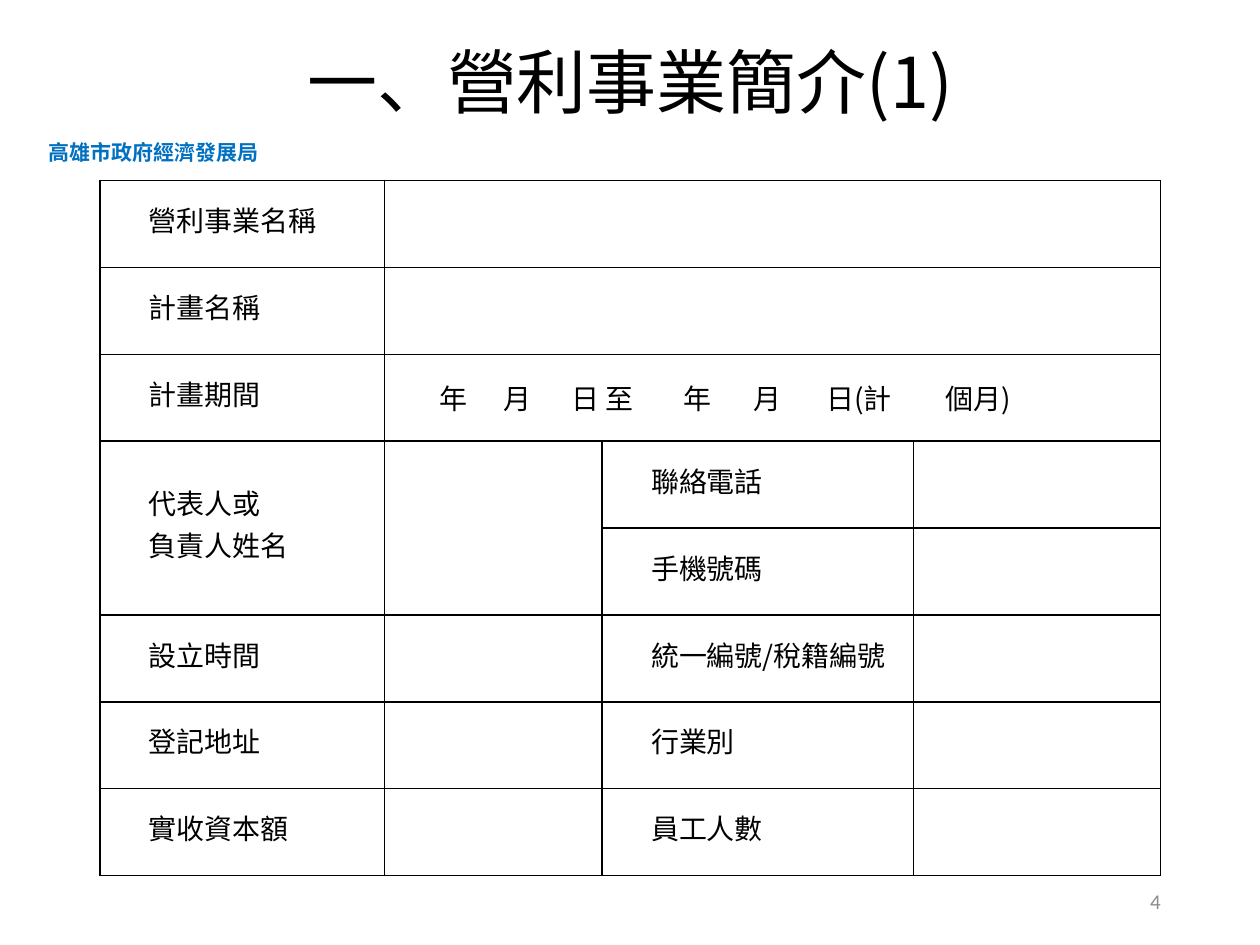
from pptx import Presentation
from pptx.dml.color import RGBColor
from pptx.enum.text import MSO_ANCHOR, MSO_AUTO_SIZE, PP_ALIGN
from pptx.oxml.ns import qn
from pptx.util import Pt
from lxml import etree

MIDDLE = MSO_ANCHOR.MIDDLE
LEFT, CENTER, RIGHT = PP_ALIGN.LEFT, PP_ALIGN.CENTER, PP_ALIGN.RIGHT
FIXED = MSO_AUTO_SIZE.NONE

BLACK = RGBColor(0x00, 0x00, 0x00)
BLUE = RGBColor(0x00, 0x70, 0xC0)
GRAY = RGBColor(0x8C, 0x8C, 0x8C)
CJK = "Noto Sans CJK SC"

COLS = [162.8, 124.3, 178, 141.1]
ROW = 49.65
# Left label and right label of each row
LABELS = [
    ("營利事業名稱", ""),
    ("計畫名稱", ""),
    ("計畫期間", ""),
    ("代表人或\n負責人姓名", "聯絡電話"),
    ("", "手機號碼"),
    ("設立時間", "統一編號/稅籍編號"),
    ("登記地址", "行業別"),
    ("實收資本額", "員工人數"),
]
PERIOD = "\t年\t月\t日 至\t年\t月\t日(計\t個月)"
STOPS = [31.5, 68, 106.5, 170.5, 210.5, 252.5, 320.5]


def write(frame, text, size=16, font=CJK, color=BLACK, bold=False,
          align=LEFT, label=False, stops=()):
    """Fill a text frame, one paragraph a line."""
    for i, line in enumerate(text.split("\n")):
        para = frame.paragraphs[0] if i == 0 else frame.add_paragraph()
        para.alignment = align
        props = para._p.get_or_add_pPr()
        if label:
            props.set("marL", str(Pt(51)))
            props.set("indent", str(Pt(-23)))
            para.line_spacing = Pt(18)
            if i:
                para.space_before = Pt(6)
        if stops:
            tabs = etree.SubElement(props, qn("a:tabLst"))
            for stop in stops:
                etree.SubElement(tabs, qn("a:tab"), pos=str(Pt(stop)), algn="l")
        run = para.add_run()
        run.text = line
        run.font.size = Pt(size)
        run.font.bold = bold
        run.font.color.rgb = color
        run.font.name = font
        etree.SubElement(run._r.get_or_add_rPr(), qn("a:ea"), typeface=font)


def add_box(slide, x, y, w, h, text, wrap=True, anchor=None, **style):
    box = slide.shapes.add_textbox(Pt(x), Pt(y), Pt(w), Pt(h))
    frame = box.text_frame
    frame.word_wrap = wrap
    frame.vertical_anchor = anchor
    write(frame, text, **style)


def add_title(slide, text):
    title = slide.shapes.title
    title.left, title.top = Pt(36), Pt(9.5)
    title.width, title.height = Pt(648), Pt(73)
    frame = title.text_frame
    frame.auto_size = FIXED
    frame.vertical_anchor = MIDDLE
    write(frame, text, size=40, align=CENTER)


def style_cell(cell):
    """Black one-point borders, no fill, no margins."""
    cell.margin_left = cell.margin_right = Pt(0)
    cell.margin_top = cell.margin_bottom = Pt(0)
    cell.vertical_anchor = MIDDLE
    props = cell._tc.get_or_add_tcPr()
    for side in ("a:lnL", "a:lnR", "a:lnT", "a:lnB"):
        line = etree.SubElement(props, qn(side), w=str(Pt(1)))
        fill = etree.SubElement(line, qn("a:solidFill"))
        etree.SubElement(fill, qn("a:srgbClr"), val=str(BLACK))
    cell.fill.background()


def add_form(slide):
    count = len(LABELS)
    table = slide.shapes.add_table(count, len(COLS), Pt(57), Pt(103.2),
                                   Pt(sum(COLS)), Pt(ROW * count)).table
    table.first_row = table.horz_banding = False
    for col, width in zip(table.columns, COLS):
        col.width = Pt(width)
    for row in table.rows:
        row.height = Pt(ROW)
    for cell in table.iter_cells():
        style_cell(cell)

    # Wide answers on top, tall cells for the person in charge
    for r in range(3):
        table.cell(r, 1).merge(table.cell(r, 3))
    for c in range(2):
        table.cell(3, c).merge(table.cell(4, c))

    for r, pair in enumerate(LABELS):
        for c, text in zip((0, 2), pair):
            if text:
                write(table.cell(r, c).text_frame, text, label=True)
    write(table.cell(2, 1).text_frame, PERIOD, stops=STOPS)


def main():
    deck = Presentation()
    deck.slide_width, deck.slide_height = Pt(720), Pt(540)
    slide = deck.slides.add_slide(deck.slide_layouts[5])

    # Heading and issuing office
    add_title(slide, "一、營利事業簡介(1)")
    add_box(slide, 20.9, 76.3, 135.4, 21.6, "高雄市政府經濟發展局",
            wrap=False, size=12, color=BLUE, bold=True)

    # Business form
    add_form(slide)

    # Page number
    add_box(slide, 508.3, 500.4, 162, 28.8, "4", anchor=MIDDLE,
            size=12, font="Calibri", color=GRAY, align=RIGHT)

    deck.save("out.pptx")


if __name__ == "__main__":
    main()
